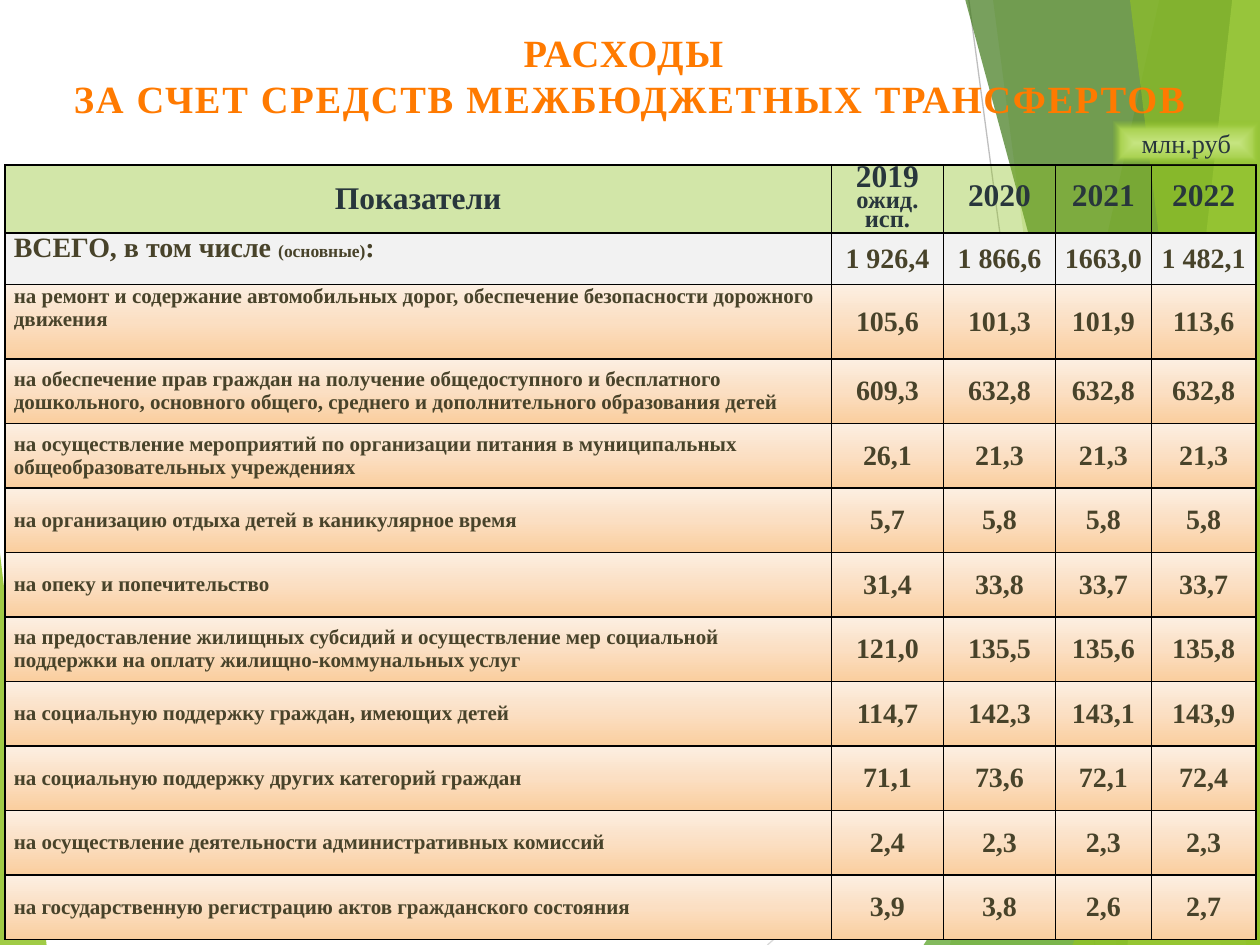
from dataclasses import dataclass
from typing import Optional

from lxml.etree import SubElement
from pptx import Presentation
from pptx.dml.color import RGBColor
from pptx.enum.shapes import MSO_CONNECTOR, MSO_SHAPE
from pptx.enum.text import MSO_ANCHOR as Anchor, PP_ALIGN as Align
from pptx.oxml import parse_xml
from pptx.oxml.ns import nsdecls, qn
from pptx.util import Cm, Pt

WIDTH, HEIGHT = 25.4, 19.05
FONT = "Times New Roman"
COLORS = {
    "green": "90C226", "leaf": "54A021", "forest": "3F7819", "lime": "C0E474",
    "light": "C7E682", "medium": "ACD454", "gray": "F2F2F2", "border": "000000",
    "line_pale": "D9D9D9", "line_gray": "BFBFBF",
    "slate": "28363C", "brown": "48432A", "outline": "BA4802",
    "yellow": "FFF200", "orange": "FF7A00", "red": "FF0300", "maroon": "4D0808",
    "peach": "FACE9E", "peach_mid": "FBDFC3", "cream": "FCEFE2",
}


@dataclass
class Facet:
    """Polygon between a slanted edge and a vertical slide edge."""
    top_x: float
    top_y: float
    bottom_x: float
    color: str
    alpha: int
    edge_x: float = WIDTH


@dataclass
class Stop:
    position: int
    color: str
    alpha: int = 100


@dataclass
class Run:
    text: str
    size: float
    color: str = "brown"
    bold: bool = True


@dataclass
class CellStyle:
    fill: object
    align: Optional[Align] = None
    anchor: Anchor = Anchor.MIDDLE
    side: float = 0.18
    top: float = 0
    line_spacing: Optional[Pt] = None


FACETS = [
    Facet(23.37, 0, 19.15, "green", 30),
    Facet(20.02, 0, 22.5, "green", 20),
    Facet(WIDTH, 8.46, 18.62, "leaf", 72),
    Facet(19.46, 0, 24.61, "forest", 70),
    Facet(24.84, 0, 22.73, "lime", 70),
    Facet(22.78, 0, 25.12, "green", 65),
    Facet(WIDTH, 9.98, 21.62, "green", 80),
    Facet(0, 11.15, 0.94, "green", 85, edge_x=0),
]
COLUMNS = [16.66, 2.26, 2.26, 1.93, 2.11]
TOTALS = ["1 926,4", "1 866,6", "1663,0", "1 482,1"]
EXPENSES = [
    ("на ремонт и содержание автомобильных дорог, обеспечение безопасности дорожного движения",
     "105,6", "101,3", "101,9", "113,6"),
    ("на обеспечение прав граждан на получение общедоступного и бесплатного дошкольного, "
     "основного общего, среднего и дополнительного образования детей",
     "609,3", "632,8", "632,8", "632,8"),
    ("на осуществление мероприятий по организации питания в муниципальных "
     "общеобразовательных учреждениях", "26,1", "21,3", "21,3", "21,3"),
    ("на организацию отдыха детей в каникулярное время", "5,7", "5,8", "5,8", "5,8"),
    ("на опеку и попечительство", "31,4", "33,8", "33,7", "33,7"),
    ("на предоставление жилищных субсидий и осуществление мер социальной поддержки "
     "на оплату жилищно-коммунальных услуг", "121,0", "135,5", "135,6", "135,8"),
    ("на социальную поддержку граждан, имеющих детей", "114,7", "142,3", "143,1", "143,9"),
    ("на социальную поддержку других категорий граждан", "71,1", "73,6", "72,1", "72,4"),
    ("на осуществление деятельности административных комиссий", "2,4", "2,3", "2,3", "2,3"),
    ("на государственную регистрацию актов гражданского состояния", "3,9", "3,8", "2,6", "2,7"),
]


# Fills
def color_xml(color: str, alpha: int = 100) -> str:
    return f'<a:srgbClr val="{COLORS[color]}"><a:alpha val="{alpha * 1000}"/></a:srgbClr>'


def solid(color: str, alpha: int = 100):
    return parse_xml(f'<a:solidFill {nsdecls("a")}>{color_xml(color, alpha)}</a:solidFill>')


def gradient(stops: list[Stop], angle: Optional[int] = None):
    """Linear gradient at the angle, or rectangular from the centre without one."""
    stop_xml = "".join(f'<a:gs pos="{stop.position * 1000}">{color_xml(stop.color, stop.alpha)}</a:gs>'
                       for stop in stops)
    direction = (f'<a:lin ang="{angle * 60000}" scaled="0"/>' if angle is not None else
                 '<a:path path="rect"><a:fillToRect l="50000" t="50000" r="50000" b="50000"/></a:path>')
    return parse_xml(f'<a:gradFill {nsdecls("a")} rotWithShape="1"><a:gsLst>{stop_xml}</a:gsLst>'
                     f'{direction}</a:gradFill>')


def fill_shape(shape, fill) -> None:
    shape.shadow.inherit = False
    shape.line.fill.background()
    shape.fill.background()
    empty = shape.element.spPr.find(qn("a:noFill"))
    empty.getparent().replace(empty, fill)


# Text
def write_runs(paragraph, runs: list[Run]) -> None:
    for item in runs:
        run = paragraph.add_run()
        run.text = item.text
        formats = {"name": FONT, "size": Pt(item.size), "bold": item.bold}
        for name, value in formats.items():
            setattr(run.font, name, value)
        run.font.color.rgb = RGBColor.from_string(COLORS[item.color])


# Background
def draw_line(slide, start: tuple[float, float], end: tuple[float, float], color: str) -> None:
    line = slide.shapes.add_connector(MSO_CONNECTOR.STRAIGHT, *map(Cm, start + end))
    line.line.width = Pt(0.75)
    line.line.color.rgb = RGBColor.from_string(COLORS[color])
    SubElement(line.element.spPr, qn("a:effectLst"))


def draw_facet(slide, facet: Facet) -> None:
    builder = slide.shapes.build_freeform(Cm(facet.top_x), Cm(facet.top_y))
    corners = [(facet.bottom_x, HEIGHT), (facet.edge_x, HEIGHT), (facet.edge_x, facet.top_y)]
    builder.add_line_segments([(Cm(x), Cm(y)) for x, y in corners])
    fill_shape(builder.convert_to_shape(), solid(facet.color, facet.alpha))


def draw_title(slide) -> None:
    title = slide.shapes.title
    title.element.getparent().append(title.element)  # in front of the facets
    title.left, title.top, title.width, title.height = map(Cm, (0, 0.33, WIDTH, 2.36))
    frame = title.text_frame
    frame.text = "РАСХОДЫ \vЗА СЧЕТ СРЕДСТВ МЕЖБЮДЖЕТНЫХ ТРАНСФЕРТОВ"
    frame.word_wrap, frame.vertical_anchor = True, Anchor.MIDDLE
    frame.paragraphs[0].alignment = Align.CENTER
    for run in frame.paragraphs[0].runs:
        run.font.size, run.font.bold = Pt(22), True
        properties = run.font._element
        properties.set("spc", "100")
        outline = SubElement(properties, qn("a:ln"), w=str(Pt(0.71)))
        outline.append(solid("outline"))
        properties.append(gradient([Stop(0, "yellow"), Stop(54, "orange"),
                                    Stop(68, "red"), Stop(100, "maroon")], 90))
        run.font.name = FONT


# Table
def fill_cell(cell, runs: list[Run], style: CellStyle) -> None:
    formats = {"margin_left": Cm(style.side), "margin_right": Cm(style.side),
               "margin_top": Cm(style.top), "margin_bottom": 0, "vertical_anchor": style.anchor}
    for name, value in formats.items():
        setattr(cell, name, value)
    paragraph = cell.text_frame.paragraphs[0]
    paragraph.alignment, paragraph.line_spacing = style.align, style.line_spacing
    write_runs(paragraph, runs)
    properties = cell._tc.get_or_add_tcPr()
    for side in ("lnL", "lnR", "lnT", "lnB"):
        SubElement(properties, qn(f"a:{side}"), w=str(Pt(1))).append(solid("border"))
    properties.append(style.fill)


def draw_table(slide) -> None:
    heights = [1.24, 1.04, 1.5] + [1.3] * (len(EXPENSES) - 1)
    table = slide.shapes.add_table(len(heights), len(COLUMNS), Cm(0.1), Cm(3.33),
                                   Cm(sum(COLUMNS)), Cm(sum(heights))).table
    table.first_row = table.horz_banding = False
    for column, width in zip(table.columns, COLUMNS):
        column.width = Cm(width)
    for row, height in zip(table.rows, heights):
        row.height = Cm(height)

    # Header
    fill_cell(table.cell(0, 0), [Run("Показатели", 18, "slate")],
              CellStyle(solid("green", 40), Align.CENTER))
    years = [[Run("2019 ", 18, "slate"), Run("ожид. исп.", 14, "slate")]]
    years += [[Run(str(year), 18, "slate")] for year in (2020, 2021, 2022)]
    for column, runs in enumerate(years, 1):
        fill_cell(table.cell(0, column), runs,
                  CellStyle(solid("green", 40), Align.CENTER, side=0.15, top=0.2, line_spacing=Pt(11)))

    # Totals and expenses
    total_label = [Run("ВСЕГО, в том числе ", 16), Run("(основные)", 10), Run(":", 16)]
    rows = [(total_label, TOTALS)]
    rows += [([Run(label, 12)], values) for label, *values in EXPENSES]
    peach = [Stop(0, "peach"), Stop(50, "peach_mid"), Stop(100, "cream")]
    for row, (label, values) in enumerate(rows, 1):
        for column, runs in enumerate([label] + [[Run(value, 16)] for value in values]):
            style = CellStyle(solid("gray") if row == 1 else gradient(peach, 270))
            if column:
                style.align, style.side = Align.CENTER, 0.02
            elif row <= 2:
                style.anchor = Anchor.TOP
            fill_cell(table.cell(row, column), runs, style)


def draw_unit(slide) -> None:
    unit = slide.shapes.add_shape(MSO_SHAPE.RECTANGLE, *map(Cm, (22.43, 2.44, 2.97, 0.89)))
    fill_shape(unit, gradient([Stop(1, "light"), Stop(61, "medium"), Stop(100, "green", 0)]))
    unit.text_frame.vertical_anchor = Anchor.TOP
    paragraph = unit.text_frame.paragraphs[0]
    paragraph.alignment = Align.CENTER
    write_runs(paragraph, [Run("млн.руб", 15, "slate", bold=False)])


def main() -> None:
    presentation = Presentation()
    presentation.slide_width, presentation.slide_height = Cm(WIDTH), Cm(HEIGHT)
    slide = presentation.slides.add_slide(presentation.slide_layouts[5])
    draw_line(slide, (15.47, HEIGHT), (WIDTH, 10.24), "line_pale")
    draw_line(slide, (19.53, 0), (22.07, HEIGHT), "line_gray")
    for facet in FACETS:
        draw_facet(slide, facet)
    draw_title(slide)
    draw_table(slide)
    draw_unit(slide)
    presentation.save("out.pptx")


if __name__ == "__main__":
    main()
